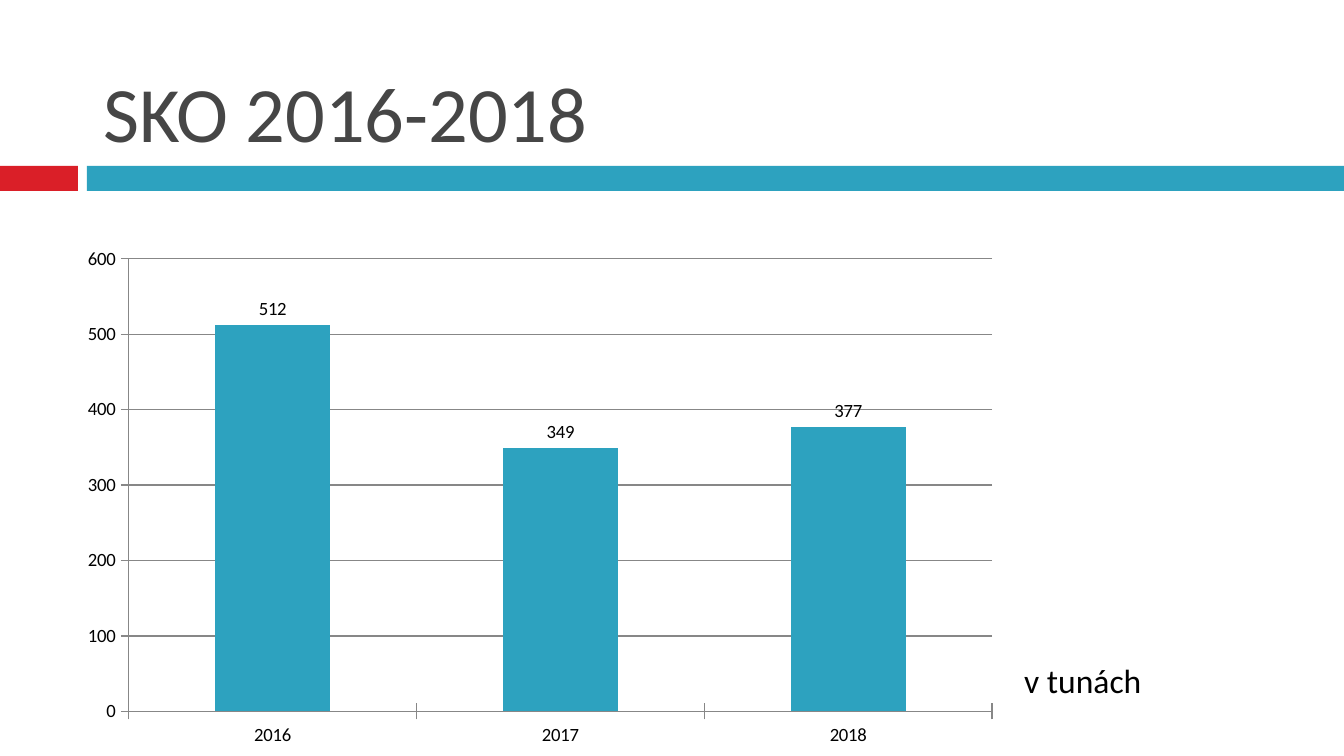
from pptx import Presentation, util as u
from pptx.chart.data import CategoryChartData
from pptx.dml.color import RGBColor
from pptx.enum import chart as ch, shapes, text

PX = 914400 / 134.4
TEAL, RED, GREY = "2DA2BF", "DA1F28", "878787"


def box(*sides):
    return [u.Emu(round(side * PX)) for side in sides]


def paint(color, code):
    color.rgb = RGBColor.from_string(code)


deck = Presentation()
deck.slide_width, deck.slide_height = box(1344, 756)
slide = deck.slides.add_slide(deck.slide_layouts[6])

# Band under the title
for left, width, code in ((0, 78, RED), (87, 1257, TEAL)):
    bar = slide.shapes.add_shape(
        shapes.MSO_SHAPE.RECTANGLE, *box(left, 166, width, 25))
    bar.shadow.inherit = False
    bar.fill.solid()
    paint(bar.fill.fore_color, code)
    bar.line.fill.background()

# Title and unit
for words, place, size, code, anchor in (
    ("SKO 2016-2018", (90, 17, 1199, 148), 42, "464646", text.MSO_ANCHOR.BOTTOM),
    ("v tunách", (1011, 653, 233, 54), 18, "000000", text.MSO_ANCHOR.TOP),
):
    frame = slide.shapes.add_textbox(*box(*place)).text_frame
    frame.word_wrap = True
    frame.vertical_anchor = anchor
    frame.text = words
    font = frame.paragraphs[0].runs[0].font
    font.name, font.size = "Calibri", u.Pt(size)
    paint(font.color, code)

# Yearly tonnage
data = CategoryChartData()
data.categories = ["2016", "2017", "2018"]
data.add_series("Series 1", (512, 349, 377))
chart = slide.shapes.add_chart(
    ch.XL_CHART_TYPE.COLUMN_CLUSTERED, *box(69, 238, 942, 518), data).chart
chart.has_legend = False
chart.has_title = False
chart.font.name, chart.font.size = "Calibri", u.Pt(10)
paint(chart.font.color, "000000")

plot = chart.plots[0]
plot.vary_by_categories = False
plot.gap_width = 150
plot.has_data_labels = True
plot.data_labels.show_value = True
plot.data_labels.position = ch.XL_LABEL_POSITION.OUTSIDE_END
fill = plot.series[0].format.fill
fill.solid()
paint(fill.fore_color, TEAL)

scale = chart.value_axis
scale.minimum_scale, scale.maximum_scale, scale.major_unit = 0, 600, 100
scale.has_major_gridlines = True
for axis in (chart.category_axis, scale):
    axis.major_tick_mark = ch.XL_TICK_MARK.CROSS
    axis.minor_tick_mark = ch.XL_TICK_MARK.NONE
for part in (chart.category_axis, scale, scale.major_gridlines):
    line = part.format.line
    line.width = u.Pt(0.75)
    paint(line.color, GREY)

deck.save("out.pptx")
